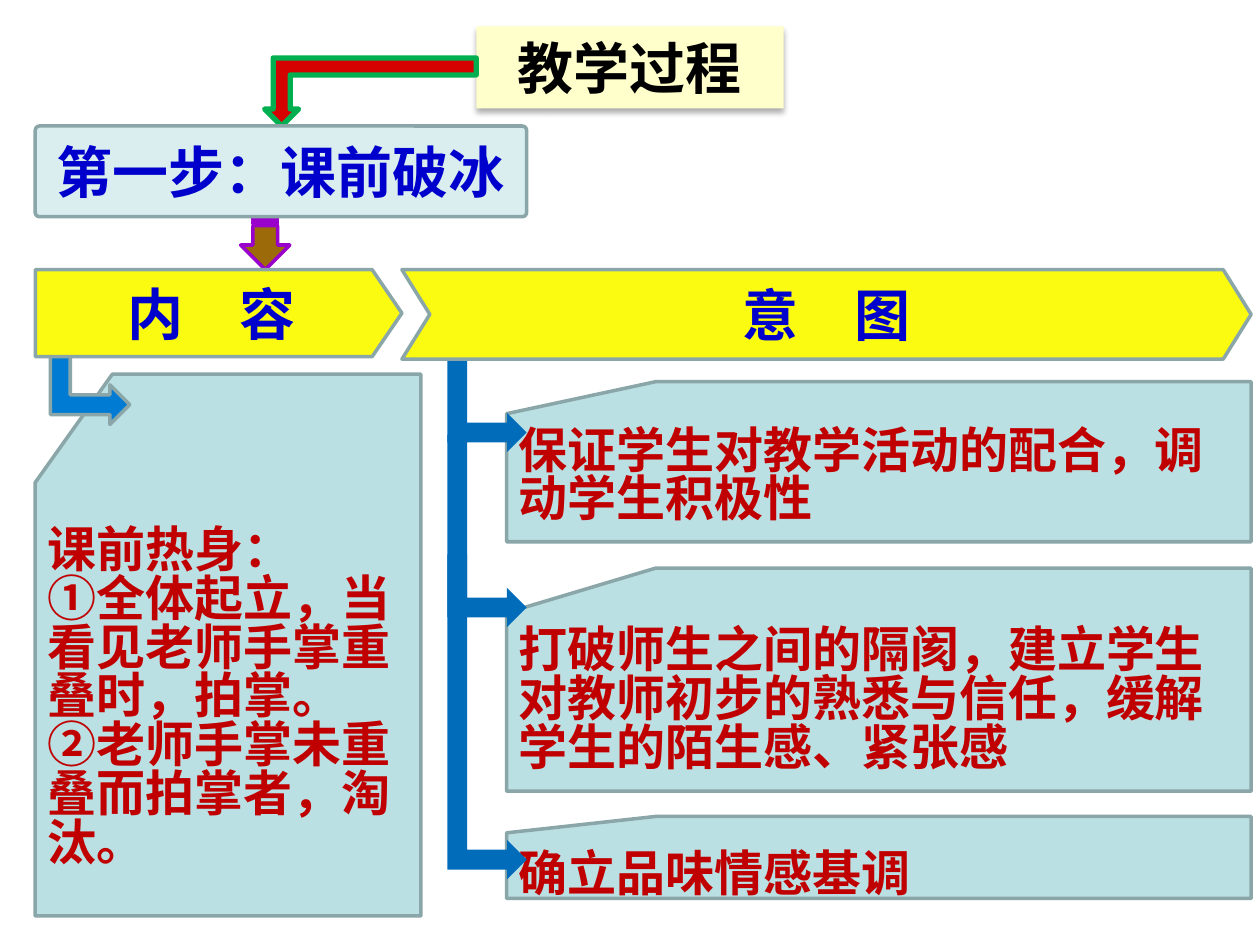
from lxml.etree import SubElement
from pptx import Presentation
from pptx.dml.color import RGBColor
from pptx.enum.shapes import MSO_SHAPE
from pptx.enum.text import MSO_ANCHOR, MSO_AUTO_SIZE, PP_ALIGN
from pptx.oxml import parse_xml
from pptx.oxml.ns import nsdecls, qn
from pptx.util import Inches, Pt

# Content: places are left, top, width, height in inches
TITLE = ("教学过程", (3.78, 0.21, 2.44, 0.65))
CARDS = [
    (["确立品味情感基调"], (4.02, 6.48, 5.91, 0.65), 1.2),
    (["打破师生之间的隔阂，建立学生对教师初步的熟悉与信任，缓解学生的陌生感、紧张感"],
     (4.02, 4.51, 5.91, 1.77), 0.83),
    (["保证学生对教学活动的配合，调动学生积极性"], (4.02, 3.03, 5.91, 1.27), 0.83),
    (["课前热身：", "①全体起立，当看见老师手掌重叠时，拍掌。", "②老师手掌未重叠而拍掌者，淘汰。"],
     (0.28, 2.97, 3.06, 4.3), 0.83),
]
BANNERS = [
    ("第一步：课前破冰", MSO_SHAPE.ROUNDED_RECTANGLE, (0.28, 1, 3.9, 0.72), 0.047, "DAEDEF"),
    ("内　容", MSO_SHAPE.PENTAGON, (0.28, 2.14, 2.91, 0.69), 0.342, "FBFB11"),
    ("意　图", MSO_SHAPE.CHEVRON, (3.19, 2.14, 6.74, 0.71), 0.312, "FBFB11"),
]
INTENT_ARROW_SPANS = [(2.82, 3.59), (3.45, 4.98), (4.4, 6.98)]  # top, bottom

EDGE = "8AA6A8"
CARD_FONT = {"size": Pt(28), "name": "Noto Sans CJK SC", "bold": True}
TITLE_FONT = {"size": Pt(32), "name": "Noto Sans CJK SC", "bold": True}
BANNER_FONT = {"size": Pt(32), "name": "Noto Sans CJK JP", "bold": True}


def color(target, value):
    target.rgb = RGBColor.from_string(value)


def paint(shape, fill, edge=None, weight=2):
    shape.fill.solid()
    color(shape.fill.fore_color, fill)
    if edge:
        color(shape.line.color, edge)
        shape.line.width = Pt(weight)
    else:
        shape.line.fill.background()


def add_block(kind, place, fill, edge=None, weight=2, rotation=0):
    block = slide.shapes.add_shape(kind, *map(Inches, place))
    block.shadow.inherit = False
    block.rotation = rotation
    paint(block, fill, edge, weight)
    return block


def add_turned(kind, place, fill, edge=None):
    """Place a quarter-turned shape by the area it covers once turned."""
    left, top, width, height = place
    shift = (width - height) / 2
    return add_block(kind, (left + shift, top - shift, height, width), fill, edge, rotation=90)


def write(shape, lines, font_values, ink, align, spacing=1.0):
    frame = shape.text_frame
    frame.word_wrap = True
    frame.auto_size = MSO_AUTO_SIZE.NONE
    frame.vertical_anchor = MSO_ANCHOR.MIDDLE
    for number, line in enumerate(lines):
        paragraph = frame.add_paragraph() if number else frame.paragraphs[0]
        paragraph.alignment = align
        paragraph.line_spacing = spacing
        paragraph.space_before = Pt(0)
        run = paragraph.add_run()
        run.text = line
        color(run.font.color, ink)
        for name, value in font_values.items():
            setattr(run.font, name, value)
        east_asian = SubElement(run.font._element, qn("a:ea"))
        east_asian.set("typeface", font_values["name"])


prs = Presentation()
prs.slide_width, prs.slide_height = Inches(10), Inches(7.5)
slide = prs.slides.add_slide(prs.slide_layouts[5])

# Title with a soft shadow
title_text, title_place = TITLE
title = slide.shapes.title
title.left, title.top, title.width, title.height = map(Inches, title_place)
paint(title, "FFFFCC")
write(title, [title_text], TITLE_FONT, "000000", PP_ALIGN.CENTER)
title._element.spPr.append(parse_xml(
    f'<a:effectLst {nsdecls("a")}><a:outerShdw blurRad="{Pt(3.5)}" dist="{Pt(2.2)}" dir="5400000">'
    '<a:srgbClr val="000000"><a:alpha val="32000"/></a:srgbClr></a:outerShdw></a:effectLst>'))

# Text cards
for lines, place, spacing in CARDS:
    card = add_block(MSO_SHAPE.FLOWCHART_CARD, place, "BBE0E3", EDGE)
    write(card, lines, CARD_FONT, "C00000", PP_ALIGN.LEFT, spacing)

# Arrows from the banners to the cards
for top, bottom in INTENT_ARROW_SPANS:
    add_turned(MSO_SHAPE.BENT_UP_ARROW, (3.55, top, 0.63, bottom - top), "006CBA")
add_turned(MSO_SHAPE.BENT_UP_ARROW, (0.4, 2.41, 0.63, 0.96), "007BD3", EDGE)

# Arrows between title, step and banners
add_block(MSO_SHAPE.BENT_UP_ARROW, (2.1, 0.46, 1.68, 0.54), "D50000", "00B050", 3, 180)
step_arrow = add_turned(MSO_SHAPE.STRIPED_RIGHT_ARROW, (1.91, 1.73, 0.39, 0.41), "996600", "9900CC")
step_fill = step_arrow._element.spPr.find(qn("a:solidFill"))
SubElement(step_fill[0], qn("a:alpha")).set("val", "97000")

# Step and column banners
for label, kind, place, adjustment, fill in BANNERS:
    banner = add_block(kind, place, fill, EDGE)
    banner.adjustments[0] = adjustment
    write(banner, [label], BANNER_FONT, "0000CC", PP_ALIGN.CENTER)

prs.save("out.pptx")
